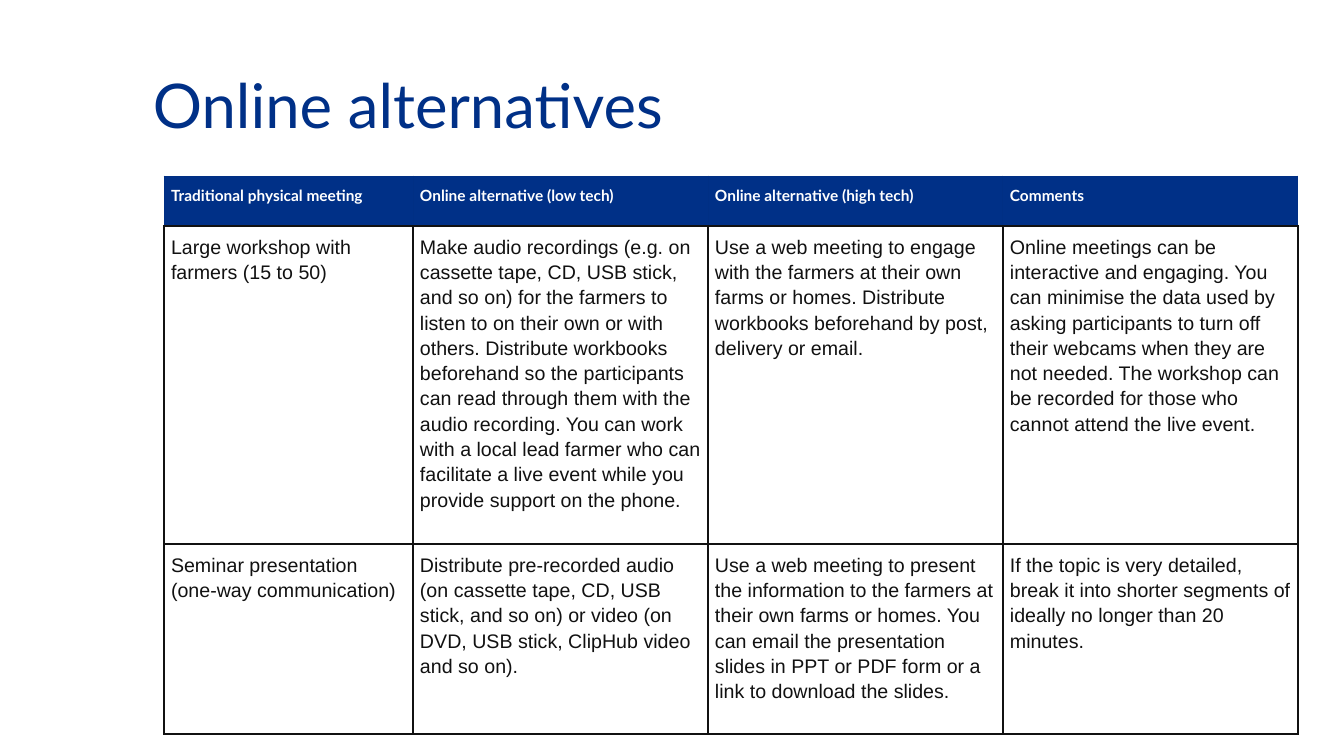
from dataclasses import dataclass

from lxml.etree import SubElement
from pptx import Presentation
from pptx.dml.color import RGBColor
from pptx.enum.text import MSO_ANCHOR
from pptx.oxml.ns import qn
from pptx.util import Pt


@dataclass(frozen=True)
class Theme:
    navy: str = "003087"
    navy_line: str = "002F84"
    ink: str = "111111"
    white: str = "FFFFFF"
    heading_font: str = "Lato"
    body_font: str = "Arial"
    title_size: int = 44
    header_size: int = 11
    body_size: int = 14


class Deck:
    """Draws styled elements on the current slide, with lengths in px."""

    EMU_PER_PX = 914400 / 100.8

    def __init__(self, theme, width, height):
        self.theme = theme
        self.prs = Presentation()
        self.prs.slide_width = self.px(width)
        self.prs.slide_height = self.px(height)
        self.s = self.prs.slides.add_slide(self.prs.slide_layouts[6])

    def px(self, n):
        return round(n * self.EMU_PER_PX)

    def style(self, p, font, size, color, bold=False):
        p.font.name = font
        p.font.size = Pt(size)
        p.font.bold = bold
        p.font.color.rgb = RGBColor.from_string(color)

    def title(self, text, *box):
        t = self.theme
        tf = self.s.shapes.add_textbox(*map(self.px, box)).text_frame
        tf.word_wrap = True
        tf.vertical_anchor = MSO_ANCHOR.MIDDLE
        p = tf.paragraphs[0]
        p.text = text
        self.style(p, t.heading_font, t.title_size, t.navy)

    def borders(self, cell, header):
        t = self.theme
        tc_pr = cell._tc.get_or_add_tcPr()
        for side in "LRTB":
            navy = header and side != "B"
            width = Pt(0.75 if navy else 1)
            ln = SubElement(tc_pr, qn(f"a:ln{side}"), w=str(width))
            fill = SubElement(ln, qn("a:solidFill"))
            SubElement(fill, qn("a:srgbClr"), val=t.navy_line if navy else t.ink)

    def cell(self, cell, text, header):
        t = self.theme
        self.borders(cell, header)
        cell.fill.solid()
        cell.fill.fore_color.rgb = RGBColor.from_string(t.navy if header else t.white)
        cell.margin_left = cell.margin_right = self.px(7)
        cell.margin_top = cell.margin_bottom = self.px(7)
        p = cell.text_frame.paragraphs[0]
        p.text = text
        p.line_spacing = 1.15
        if header:
            self.style(p, t.heading_font, t.header_size, t.white, True)
        else:
            p.space_after = Pt(6)
            self.style(p, t.body_font, t.body_size, t.ink)

    def table(self, rows, left, top, widths, heights):
        box = map(self.px, (left, top, sum(widths), sum(heights)))
        tbl = self.s.shapes.add_table(len(rows), len(widths), *box).table
        tbl.horz_banding = False
        for col, width in zip(tbl.columns, widths):
            col.width = self.px(width)
        for i, (row, height) in enumerate(zip(rows, heights)):
            tbl.rows[i].height = self.px(height)
            for j, text in enumerate(row):
                self.cell(tbl.cell(i, j), text, header=i == 0)


ALTERNATIVES = [
    (
        "Traditional physical meeting",
        "Online alternative (low tech)",
        "Online alternative (high tech)",
        "Comments",
    ),
    (
        "Large workshop with farmers (15 to 50)",
        "Make audio recordings (e.g. on cassette tape, CD, USB stick, and so on) "
        "for the farmers to listen to on their own or with others. Distribute "
        "workbooks beforehand so the participants can read through them with the "
        "audio recording. You can work with a local lead farmer who can facilitate "
        "a live event while you provide support on the phone.",
        "Use a web meeting to engage with the farmers at their own farms or homes. "
        "Distribute workbooks beforehand by post, delivery or email.",
        "Online meetings can be interactive and engaging. You can minimise the data "
        "used by asking participants to turn off their webcams when they are not "
        "needed. The workshop can be recorded for those who cannot attend the live "
        "event.",
    ),
    (
        "Seminar presentation (one-way communication)",
        "Distribute pre-recorded audio (on cassette tape, CD, USB stick, and so on) "
        "or video (on DVD, USB stick, ClipHub video and so on).",
        "Use a web meeting to present the information to the farmers at their own "
        "farms or homes. You can email the presentation slides in PPT or PDF form "
        "or a link to download the slides.",
        "If the topic is very detailed, break it into shorter segments of ideally "
        "no longer than 20 minutes.",
    ),
]


def main():
    deck = Deck(Theme(), 1344, 756)
    deck.title("Online alternatives", 143, 52, 1134, 104)
    deck.table(ALTERNATIVES, 164, 176, [249] + [295] * 3, [50, 318, 190])
    deck.prs.save("out.pptx")


if __name__ == "__main__":
    main()
